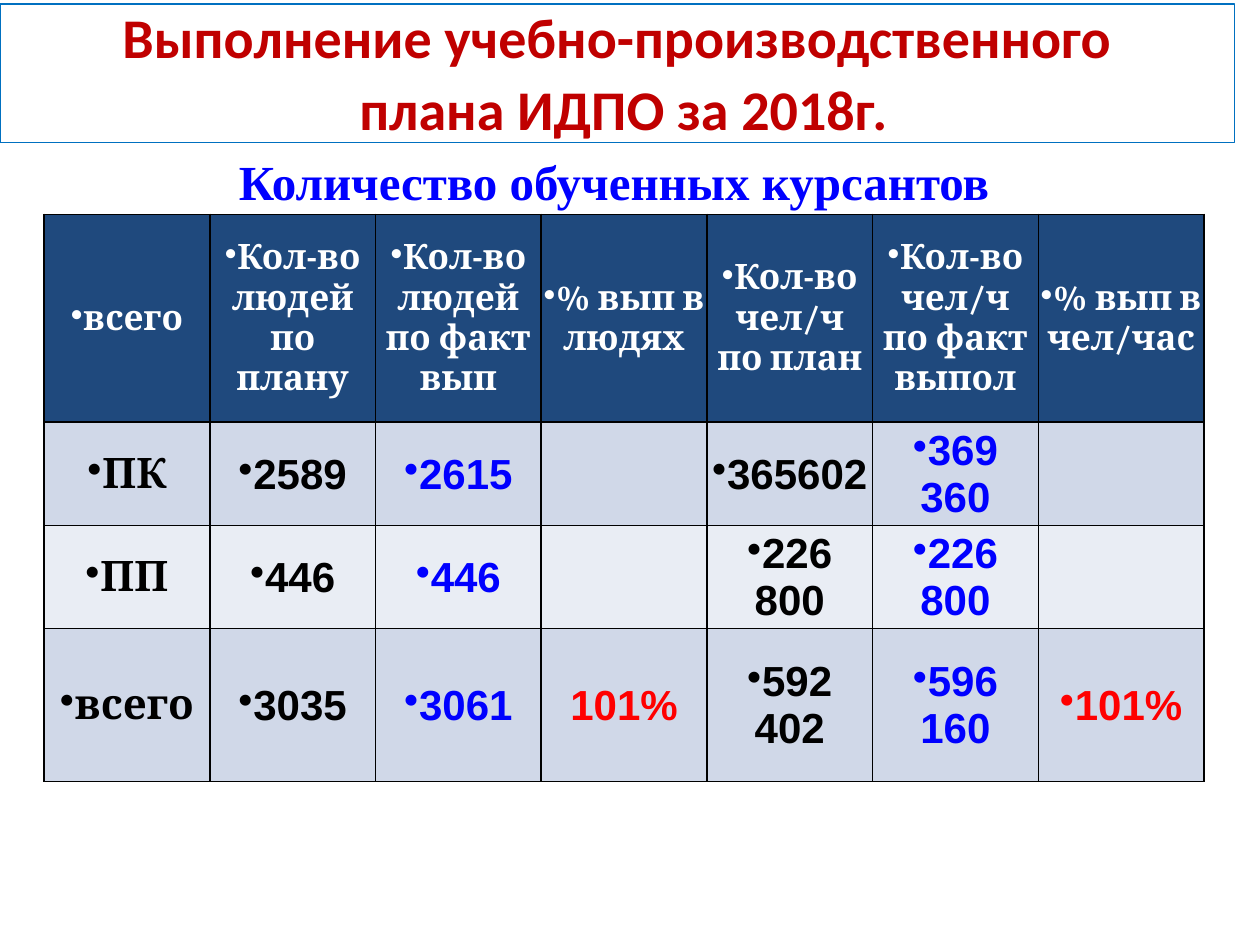
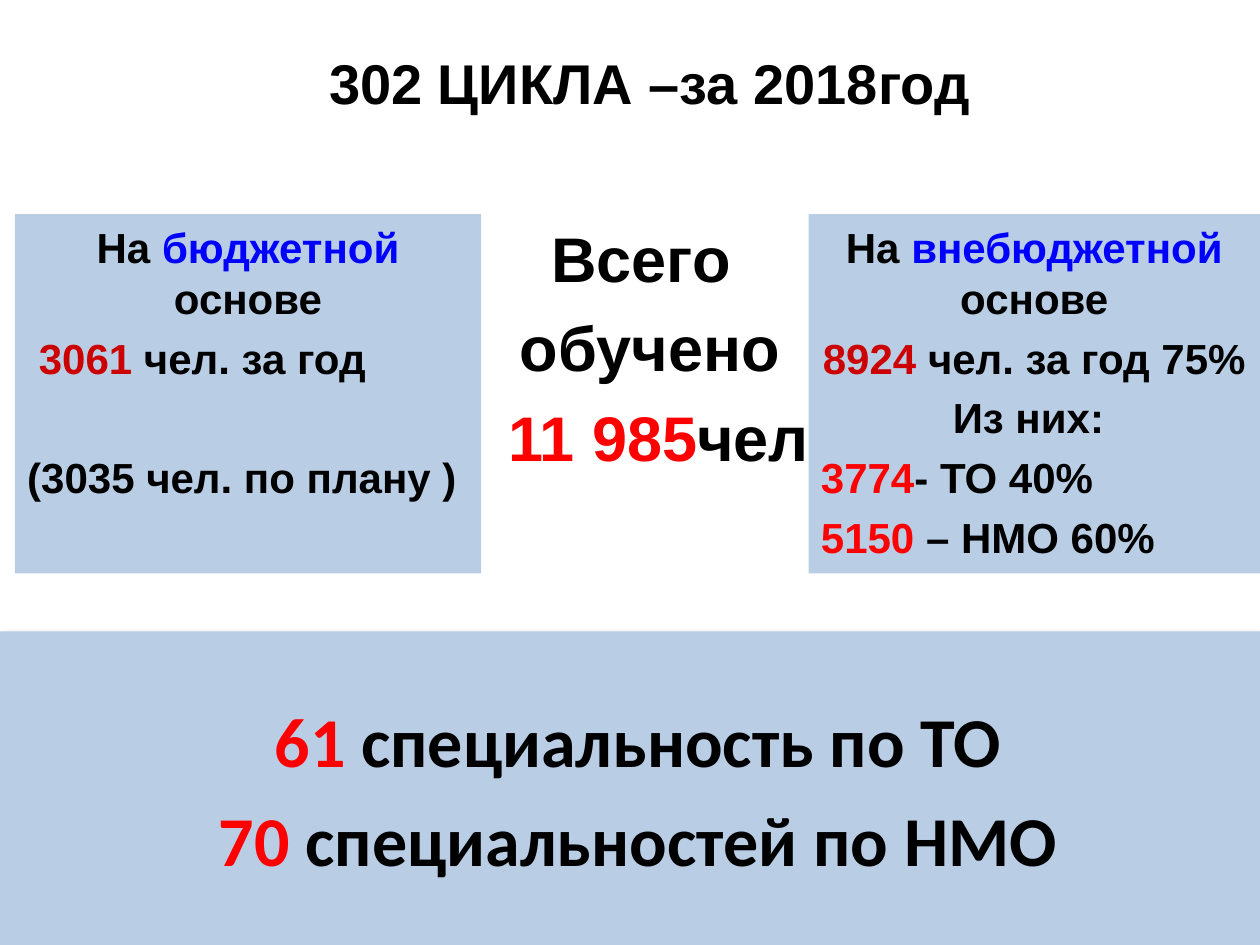
from lxml.etree import SubElement
from pptx import Presentation
from pptx.dml.color import RGBColor
from pptx.enum.shapes import MSO_SHAPE
from pptx.enum.text import MSO_ANCHOR, PP_ALIGN
from pptx.oxml.ns import qn
from pptx.util import Cm, Pt

BLACK = RGBColor(0x00, 0x00, 0x00)
WHITE = RGBColor(0xFF, 0xFF, 0xFF)
BLUE = RGBColor(0x00, 0x00, 0xFF)
RED = RGBColor(0xFF, 0x00, 0x00)
DARK_RED = RGBColor(0xCC, 0x00, 0x00)
TITLE_RED = RGBColor(0xC0, 0x00, 0x00)
TITLE_BORDER = RGBColor(0x00, 0x70, 0xC0)
PANEL = RGBColor(0xB9, 0xCD, 0xE5)
HEADER_FILL = RGBColor(0x1F, 0x49, 0x7D)
BAND_FILLS = (RGBColor(0xD0, 0xD8, 0xE8), RGBColor(0xE9, 0xED, 0xF4))

LEFT, CENTER = PP_ALIGN.LEFT, PP_ALIGN.CENTER
LINE_FACTOR = 1.22
GAP_FACTOR = 0.2

HEADINGS = (
    "всего", "Кол-во людей по плану", "Кол-во людей по факт вып",
    "% вып в людях", "Кол-во чел/ч\nпо план", "Кол-во чел/ч\nпо факт выпол",
    "% вып в чел/час",
)
RESULTS = (
    ("ПК", "2589", "2615", "", "365602", "369 360", ""),
    ("ПП", "446", "446", "", "226 800", "226 800", ""),
    ("всего", "3035", "3061", "101%", "592 402", "596 160", "101%"),
)
COLUMN_COLORS = (BLACK, BLACK, BLUE, RED, BLACK, BLUE, RED)
ROW_HEIGHTS = (4.19, 2.08, 2.08, 3.08)
COLUMN_WIDTH = 3.34


def add_span(para, text, size, font, color):
    span = para.add_run()
    span.text = text
    span.font.size = Pt(size)
    span.font.name = font
    span.font.bold = True
    span.font.color.rgb = color


def write_paragraphs(box, paragraphs, size, font, line_spacing=None):
    """Each paragraph is (alignment, skipped lines above, (text, color), ...)."""
    frame = box.text_frame
    frame.word_wrap = True
    line, gap = size * LINE_FACTOR, size * GAP_FACTOR
    for number, (alignment, skipped, *spans) in enumerate(paragraphs):
        para = frame.add_paragraph() if number else frame.paragraphs[0]
        para.alignment = alignment
        para.line_spacing = line_spacing or Pt(line)
        if number:
            para.space_before = Pt(gap + skipped * (line + gap))
        for text, color in spans:
            add_span(para, text, size, font, color)


def add_panel(page, left, top, width, height, fill=None, border=None,
              anchor=MSO_ANCHOR.TOP):
    panel = page.shapes.add_shape(
        MSO_SHAPE.RECTANGLE, Cm(left), Cm(top), Cm(width), Cm(height))
    panel.shadow.inherit = False
    panel.text_frame.vertical_anchor = anchor
    if fill is None:
        panel.fill.background()
    else:
        panel.fill.solid()
        panel.fill.fore_color.rgb = fill
    if border is None:
        panel.line.fill.background()
    else:
        panel.line.color.rgb = border
        panel.line.width = Pt(0.75)
    return panel


def add_text_box(page, left, top, width, height):
    return page.shapes.add_textbox(Cm(left), Cm(top), Cm(width), Cm(height))


def add_soft_shadow(shape):
    effects = shape._element.spPr.find(qn("a:effectLst"))
    shadow = SubElement(effects, qn("a:outerShdw"), blurRad=str(Pt(4)),
                        dist=str(Pt(3)), dir="2700000", rotWithShape="0")
    color = SubElement(shadow, qn("a:srgbClr"), val=str(BLACK))
    SubElement(color, qn("a:alpha"), val="40000")


def add_bullet(para):
    properties = para._p.get_or_add_pPr()
    properties.set("marL", "0")
    properties.set("indent", "0")
    SubElement(properties, qn("a:buChar"), char="•")


def style_cell(cell, fill):
    """Set margins, borders and fill; borders must precede the fill in the XML."""
    cell.margin_left = cell.margin_right = cell.margin_top = Cm(0.03)
    cell.margin_bottom = 0
    cell.vertical_anchor = MSO_ANCHOR.MIDDLE
    properties = cell._tc.get_or_add_tcPr()
    for side in ("lnL", "lnR", "lnT", "lnB"):
        border = SubElement(properties, qn(f"a:{side}"), w=str(Pt(1)))
        paint = SubElement(border, qn("a:solidFill"))
        SubElement(paint, qn("a:srgbClr"), val=str(BLACK))
    cell.fill.solid()
    cell.fill.fore_color.rgb = fill


def write_cell(cell, text, size, font, color, bulleted=True):
    para = cell.text_frame.paragraphs[0]
    para.alignment = CENTER
    if bulleted:
        add_bullet(para)
    for number, part in enumerate(text.split("\n")):
        if number:
            para.add_line_break()
        add_span(para, part, size, font, color)


def add_results_table(page):
    columns = len(HEADINGS)
    table = page.shapes.add_table(
        len(ROW_HEIGHTS), columns, Cm(0.89), Cm(4.32),
        Cm(COLUMN_WIDTH * columns), Cm(sum(ROW_HEIGHTS))).table
    for column in table.columns:
        column.width = Cm(COLUMN_WIDTH)
    for row, height in zip(table.rows, ROW_HEIGHTS):
        row.height = Cm(height)
    for column, heading in enumerate(HEADINGS):
        cell = table.cell(0, column)
        style_cell(cell, HEADER_FILL)
        write_cell(cell, heading, 20, "Cambria", WHITE)
    for row, values in enumerate(RESULTS, start=1):
        for column, (value, color) in enumerate(zip(values, COLUMN_COLORS)):
            cell = table.cell(row, column)
            style_cell(cell, BAND_FILLS[(row - 1) % 2])
            if value:
                font = "Arial" if column else "Cambria"
                write_cell(cell, value, 24, font, color, bulleted=column != 3)


def build_plan_page(page):
    title = add_panel(page, 0, 0.08, 24.89, 2.79, border=TITLE_BORDER)
    write_paragraphs(title, (
        (CENTER, 0, ("Выполнение учебно-производственного", TITLE_RED)),
        (CENTER, 0, (" плана ИДПО за 2018г.", TITLE_RED)),
    ), 32, "Calibri", line_spacing=0.9)
    subtitle = add_text_box(page, 1.5, 2.92, 22, 1.4)
    write_paragraphs(subtitle, (
        (CENTER, 0, ("Количество обученных курсантов ", BLUE)),
    ), 28, "Times New Roman", line_spacing=1.0)
    add_results_table(page)


def build_cycles_page(page):
    title = add_text_box(page, 2.29, 0.84, 21.62, 1.6)
    write_paragraphs(title, (
        (CENTER, 0, ("302 ЦИКЛА –за 2018год", BLACK)),
    ), 32, "Arial")
    total = add_text_box(page, 2.29, 4.27, 21.62, 5.6)
    write_paragraphs(total, (
        (CENTER, 0, ("Всего ", BLACK)),
        (CENTER, 0, ("обучено", BLACK)),
        (CENTER, 0, (" ", BLACK), ("11 985", RED), ("чел", BLACK)),
    ), 36, "Arial")

    specialties = add_panel(page, 0, 12.73, 25.4, 6.32, PANEL,
                            anchor=MSO_ANCHOR.MIDDLE)
    add_soft_shadow(specialties)
    write_paragraphs(specialties, (
        (CENTER, 0, (" 61 ", RED), ("специальность по ТО", BLACK)),
        (CENTER, 0, (" 70", RED), (" специальностей по НМО", BLACK)),
    ), 40, "Calibri")

    budget = add_panel(page, 0.3, 4.32, 9.4, 7.24, PANEL)
    write_paragraphs(budget, (
        (CENTER, 0, ("На ", BLACK), ("бюджетной", BLUE), (" основе", BLACK)),
        (LEFT, 0, (" 3061", DARK_RED), (" чел. за год", BLACK)),
        (LEFT, 1, ("(3035 чел. по плану )", BLACK)),
    ), 24, "Arial")

    paid = add_panel(page, 16.3, 4.32, 9.1, 7.24, PANEL)
    write_paragraphs(paid, (
        (CENTER, 0, ("На ", BLACK), ("внебюджетной", BLUE), (" основе", BLACK)),
        (CENTER, 0, ("8924", DARK_RED), (" чел. за год 75%", BLACK)),
        (CENTER, 0, ("Из них: ", BLACK)),
        (LEFT, 0, ("3774", RED), ("- ТО 40%", BLACK)),
        (LEFT, 0, ("5150", RED), (" – НМО 60%", BLACK)),
    ), 24, "Arial")


def main():
    deck = Presentation()
    deck.slide_width, deck.slide_height = Cm(25.4), Cm(19.05)
    for build_page in (build_plan_page, build_cycles_page):
        build_page(deck.slides.add_slide(deck.slide_layouts[6]))
    deck.save("out.pptx")


if __name__ == "__main__":
    main()
